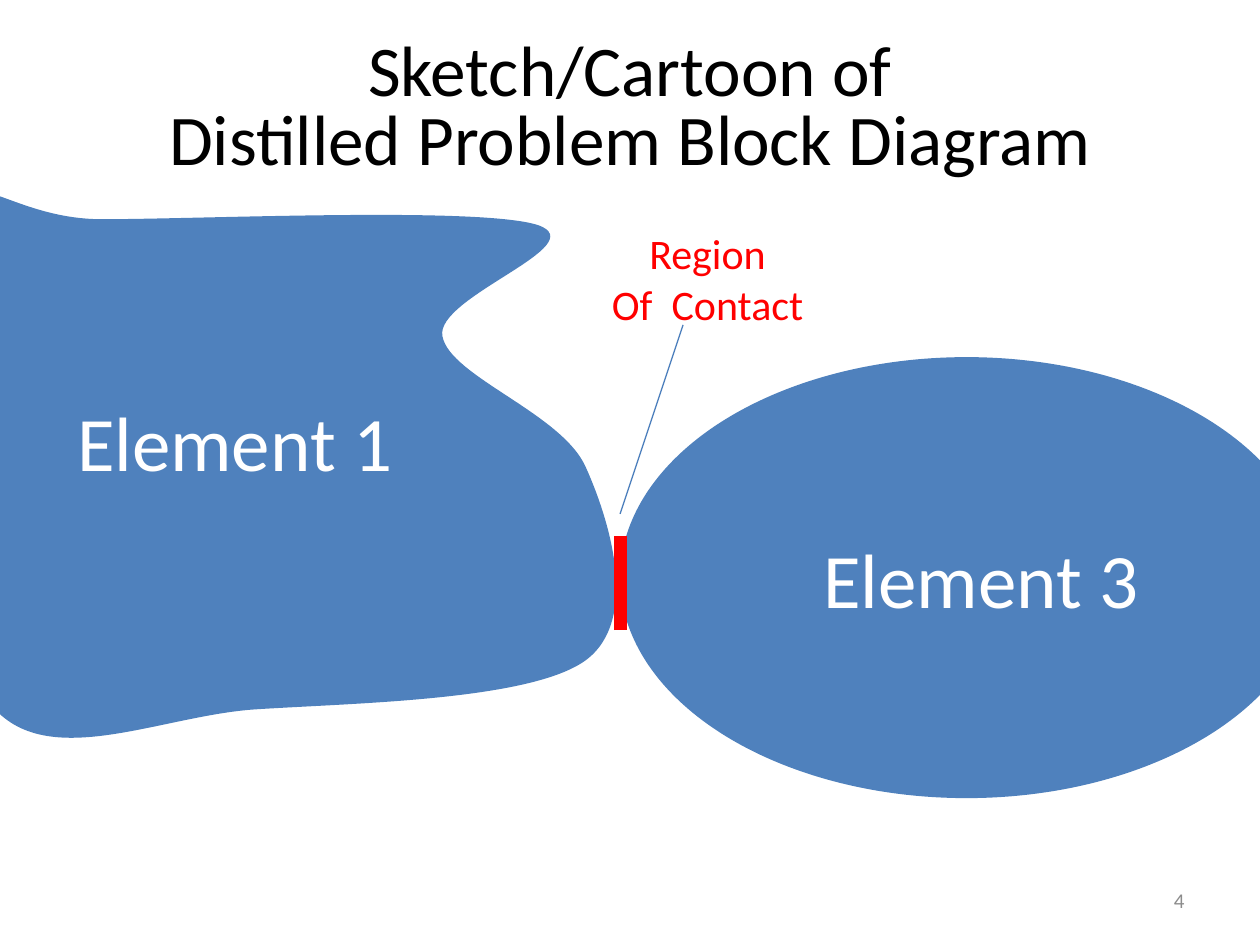
from lxml.etree import SubElement
from pptx import Presentation
from pptx.dml.color import RGBColor
from pptx.enum.shapes import MSO_CONNECTOR, MSO_SHAPE
from pptx.enum.text import MSO_ANCHOR, MSO_AUTO_SIZE, PP_ALIGN
from pptx.oxml.ns import qn
from pptx.util import Cm, Pt

BLUE, RED, WHITE = "4F81BD", "FF0000", "FFFFFF"

# Closed outline of Element 1 in cm from its box corner: a start point,
# then two control points and an end point for each curve.
ELEMENT_1_OUTLINE = [
    (3.76, 1.45),
    (5.77, 1.45), (11.4, 1.19), (12.55, 1.57),
    (13.69, 1.98), (10.46, 3.02), (10.62, 3.81),
    (10.77, 4.62), (13.03, 5.36), (13.51, 6.45),
    (14.0, 7.54), (14.6, 9.53), (13.51, 10.34),
    (12.4, 11.15), (8.89, 11.2), (6.86, 11.33),
    (4.85, 11.46), (2.46, 12.7), (1.4, 11.07),
    (0.33, 9.45), (0, 3.18), (0.43, 1.57),
    (0.86, 0), (1.75, 1.45), (3.76, 1.45),
]


def rgb(hex_color):
    return RGBColor.from_string(hex_color)


def write_lines(frame, lines, size, color, align=PP_ALIGN.CENTER, spacing=None):
    for index, line in enumerate(lines):
        paragraph = frame.paragraphs[0] if index == 0 else frame.add_paragraph()
        paragraph.alignment = align
        paragraph.line_spacing = spacing
        run = paragraph.add_run()
        run.text = line
        run.font.name = "Calibri"
        run.font.size = Pt(size)
        run.font.color.rgb = rgb(color)


def add_label(slide, left, top, width, height, lines, size, color):
    """Add centred text that does not wrap and grows with its content."""
    label = slide.shapes.add_textbox(Cm(left), Cm(top), Cm(width), Cm(height))
    write_lines(label.text_frame, lines, size, color)
    label.text_frame.word_wrap = False
    label.text_frame.auto_size = MSO_AUTO_SIZE.SHAPE_TO_FIT_TEXT


def add_line(slide, start, end, color, weight):
    line = slide.shapes.add_connector(
        MSO_CONNECTOR.STRAIGHT, *(Cm(value) for value in (*start, *end)))
    line.line.color.rgb = rgb(color)
    line.line.width = Pt(weight)
    SubElement(line._element.spPr, qn("a:effectLst"))


def paint_body(body):
    body.shadow.inherit = False
    body.fill.solid()
    body.fill.fore_color.rgb = rgb(BLUE)
    body.line.fill.background()


def curve_segments(outline):
    """Turn every three straight segments into one cubic Bézier curve."""
    path = next(outline._element.iter(qn("a:path")))
    segments = path.findall(qn("a:lnTo"))
    for first in range(0, len(segments), 3):
        curve = SubElement(path, qn("a:cubicBezTo"))
        segments[first].addprevious(curve)
        for segment in segments[first:first + 3]:
            curve.append(segment[0])
            path.remove(segment)


def fill_title(slide, left, top, width, height):
    title = slide.shapes.title
    title.left, title.top = Cm(left), Cm(top)
    title.width, title.height = Cm(width), Cm(height)
    title.text_frame.auto_size = MSO_AUTO_SIZE.NONE
    title.text_frame.vertical_anchor = MSO_ANCHOR.MIDDLE
    write_lines(title.text_frame,
                ["Sketch/Cartoon of", "Distilled Problem Block Diagram"],
                40.7, "000000", spacing=0.8)


def add_element_1(slide, left, top):
    points = [(Cm(left + x), Cm(top + y)) for x, y in ELEMENT_1_OUTLINE]
    builder = slide.shapes.build_freeform(*points[0])
    builder.add_line_segments(points[1:], close=True)
    body = builder.convert_to_shape()
    curve_segments(body)
    paint_body(body)
    add_label(slide, left + 2.97, top + 4.85, 6.93, 2.13,
              ["Element 1"], 44, WHITE)


def add_element_3(slide, left, top, width, height):
    body = slide.shapes.add_shape(
        MSO_SHAPE.OVAL, Cm(left), Cm(top), Cm(width), Cm(height))
    paint_body(body)
    add_label(slide, left + 3.81, top + 3.4, 6.93, 2.13,
              ["Element 3"], 44, WHITE)


def add_contact_region(slide, left, top, width, height):
    contact_x, bottom = left + 0.43, top + height
    add_line(slide, (contact_x, bottom), (contact_x, bottom - 1.9), RED, 7.5)
    add_label(slide, left, top, width, 2.31, ["Region", "Of  Contact"], 24, RED)
    add_line(slide, (left + 1.7, top + 2.08), (contact_x, top + 5.89),
             "4B7EBC", 0.75)


def add_page_number(slide, left, top, width, height):
    number = slide.shapes.add_textbox(Cm(left), Cm(top), Cm(width), Cm(height))
    number.text_frame.word_wrap = True
    number.text_frame.vertical_anchor = MSO_ANCHOR.MIDDLE
    write_lines(number.text_frame, ["4"], 12, "8C8C8C", PP_ALIGN.RIGHT)


def main():
    deck = Presentation()
    deck.slide_width, deck.slide_height = Cm(25.4), Cm(19.05)
    slide = deck.slides.add_slide(deck.slide_layouts.get_by_name("Title Only"))
    fill_title(slide, 1.27, 0.64, 22.86, 3.18)
    add_element_1(slide, -1.7, 2.97)
    add_element_3(slide, 12.5, 7.2, 13.97, 8.89)
    add_contact_region(slide, 12.07, 4.47, 4.39, 8.23)
    add_page_number(slide, 18.2, 17.65, 5.93, 1.01)
    deck.save("out.pptx")


if __name__ == "__main__":
    main()
